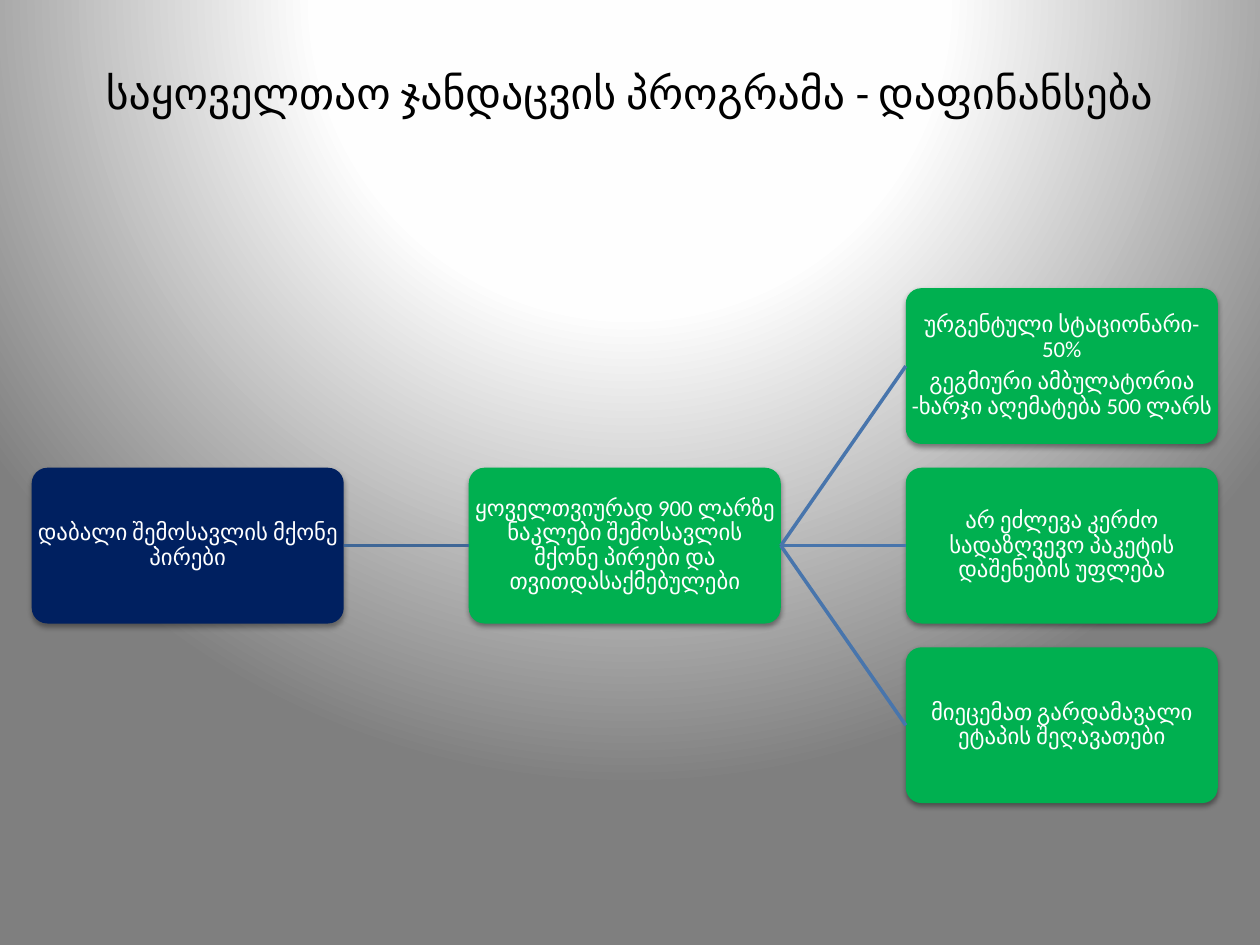
from dataclasses import dataclass

from lxml import etree
from pptx import Presentation
from pptx.dml.color import RGBColor
from pptx.enum.shapes import MSO_CONNECTOR, MSO_SHAPE
from pptx.enum.text import MSO_ANCHOR, PP_ALIGN
from pptx.oxml import parse_xml
from pptx.oxml.ns import nsdecls, qn
from pptx.util import Cm, Pt

STRAIGHT = MSO_CONNECTOR.STRAIGHT
ROUNDED = MSO_SHAPE.ROUNDED_RECTANGLE
MIDDLE = MSO_ANCHOR.MIDDLE
CENTER = PP_ALIGN.CENTER
LEFT_SITE, RIGHT_SITE = 1, 3


@dataclass(frozen=True)
class Theme:
    font: str = "Calibri"
    title_size: float = 25
    box_size: float = 13
    paragraph_gap: float = 4.5
    line_width: float = 2
    title: str = "000000"
    box_text: str = "FFFFFF"
    group: str = "002060"
    detail: str = "00B050"
    first_link: str = "3F6797"
    branch_link: str = "4875AC"
    shadow: str = "000000"
    backdrop: tuple = ((0, "FFFFFF"), (40, "FEFEFE"), (100, "7F7F7F"))


THEME = Theme()

BOX_WIDTH, BOX_HEIGHT = 6.29, 3.14
FIRST_LEFT, COLUMN_STEP = 0.64, 8.81
FIRST_TOP, ROW_STEP = 5.81, 3.62

TITLE = "საყოველთაო ჯანდაცვის პროგრამა - დაფინანსება"
LOW_INCOME = ["დაბალი შემოსავლის მქონე პირები"]
CRITERION = ["ყოველთვიურად 900 ლარზე ნაკლები შემოსავლის მქონე პირები და თვითდასაქმებულები"]
BENEFITS = [
    ["ურგენტული სტაციონარი- 50%", "გეგმიური ამბულატორია -ხარჯი აღემატება 500 ლარს"],
    ["არ ეძლევა კერძო სადაზღვევო პაკეტის დაშენების უფლება"],
    ["მიეცემათ გარდამავალი ეტაპის შეღავათები"],
]


def paint_backdrop(slide):
    stops = "".join(
        f'<a:gs pos="{position * 1000}"><a:srgbClr val="{color}"/></a:gs>'
        for position, color in THEME.backdrop
    )
    gradient = parse_xml(
        f'<a:gradFill {nsdecls("a")} rotWithShape="1"><a:gsLst>{stops}</a:gsLst>'
        '<a:path path="circle"><a:fillToRect l="50000" t="-80000" r="50000" b="180000"/>'
        "</a:path></a:gradFill>"
    )
    fill = slide.background.fill
    fill.gradient()
    placeholder = slide.element.find(".//" + qn("a:gradFill"))
    placeholder.getparent().replace(placeholder, gradient)


def write(paragraph, wording, size, color):
    paragraph.alignment = CENTER
    run = paragraph.add_run()
    run.text = wording
    run.font.name = THEME.font
    run.font.size = Pt(size)
    run.font.color.rgb = RGBColor.from_string(color)


def add_title(slide):
    frame = slide.shapes.add_textbox(Cm(1.27), Cm(0.76), Cm(22.86), Cm(2.21)).text_frame
    frame.word_wrap = True
    frame.vertical_anchor = MIDDLE
    write(frame.paragraphs[0], TITLE, THEME.title_size, THEME.title)


def add_shadow(box, opacity, distance):
    effects = box.element.spPr.find(qn("a:effectLst"))
    effects.append(parse_xml(
        f'<a:outerShdw {nsdecls("a")} blurRad="{Pt(3.1)}" dist="{Pt(distance)}" '
        f'dir="5400000" rotWithShape="0"><a:srgbClr val="{THEME.shadow}">'
        f'<a:alpha val="{opacity * 1000}"/></a:srgbClr></a:outerShdw>'
    ))


def add_box(slide, column, row, wordings, color=THEME.detail, opacity=38, distance=1.6):
    box = slide.shapes.add_shape(
        ROUNDED,
        Cm(FIRST_LEFT + column * COLUMN_STEP), Cm(FIRST_TOP + row * ROW_STEP),
        Cm(BOX_WIDTH), Cm(BOX_HEIGHT),
    )
    box.adjustments[0] = 0.1
    box.fill.solid()
    box.fill.fore_color.rgb = RGBColor.from_string(color)
    box.line.fill.background()
    box.shadow.inherit = False
    add_shadow(box, opacity, distance)

    frame = box.text_frame
    frame.word_wrap = True
    frame.vertical_anchor = MIDDLE
    frame.margin_left = frame.margin_right = Cm(0.02)
    frame.margin_top = frame.margin_bottom = Cm(0.02)
    for index, wording in enumerate(wordings):
        paragraph = frame.add_paragraph() if index else frame.paragraphs[0]
        paragraph.line_spacing = 0.9
        paragraph.space_after = Pt(THEME.paragraph_gap)
        write(paragraph, wording, THEME.box_size, THEME.box_text)
    return box


def link(slide, source, target, color):
    connector = slide.shapes.add_connector(STRAIGHT, 0, 0, 0, 0)
    connector.begin_connect(source, RIGHT_SITE)
    connector.end_connect(target, LEFT_SITE)
    connector.line.color.rgb = RGBColor.from_string(color)
    connector.line.width = Pt(THEME.line_width)
    etree.SubElement(connector.element.spPr, qn("a:effectLst"))


def main():
    presentation = Presentation()
    presentation.slide_width, presentation.slide_height = Cm(25.4), Cm(19.05)
    slide = presentation.slides.add_slide(presentation.slide_layouts[6])

    paint_backdrop(slide)
    add_title(slide)
    low_income = add_box(slide, 0, 1, LOW_INCOME, THEME.group, opacity=35, distance=1.8)
    criterion = add_box(slide, 1, 1, CRITERION)
    link(slide, low_income, criterion, THEME.first_link)
    for row, wordings in enumerate(BENEFITS):
        benefit = add_box(slide, 2, row, wordings)
        link(slide, criterion, benefit, THEME.branch_link)

    presentation.save("out.pptx")


if __name__ == "__main__":
    main()
